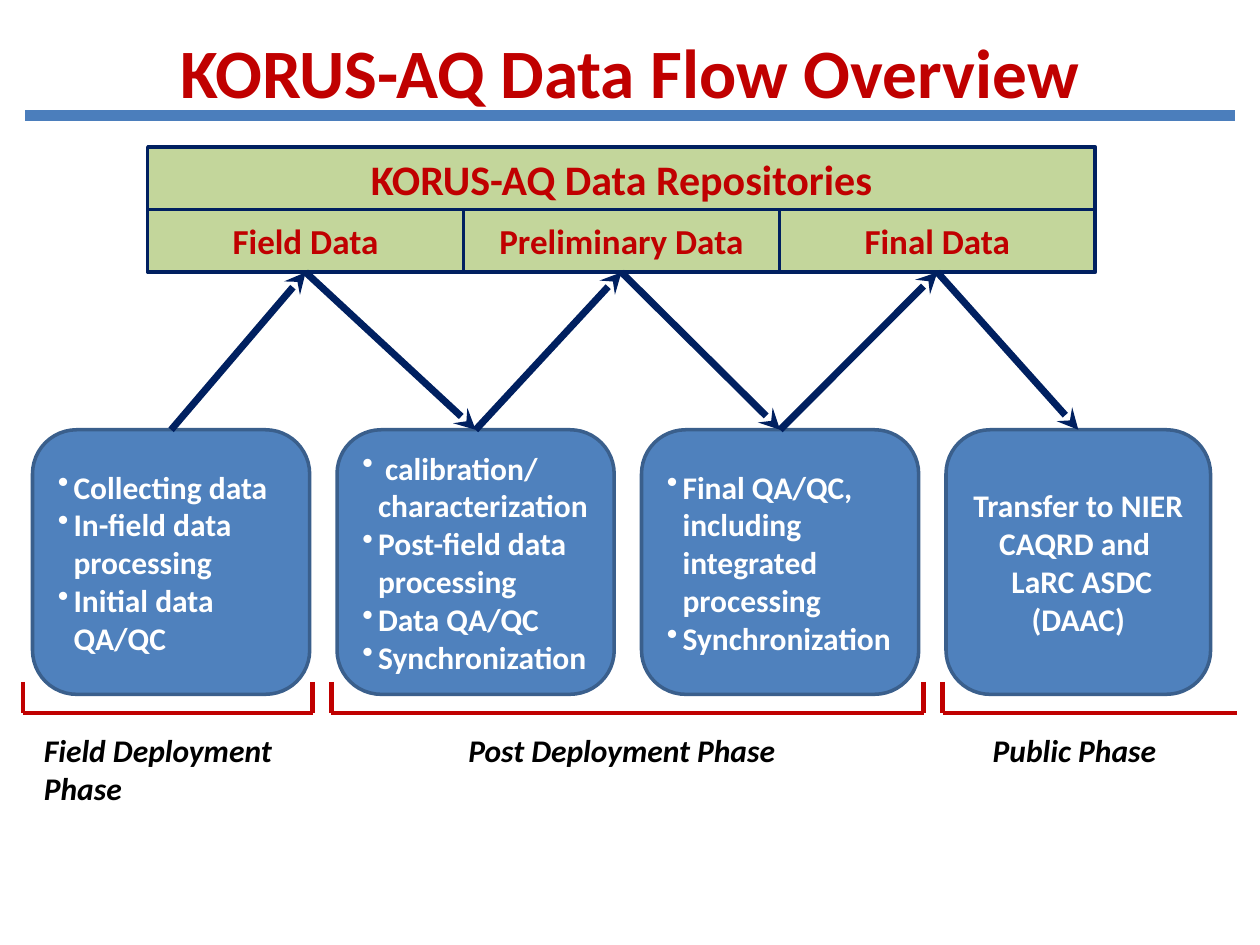
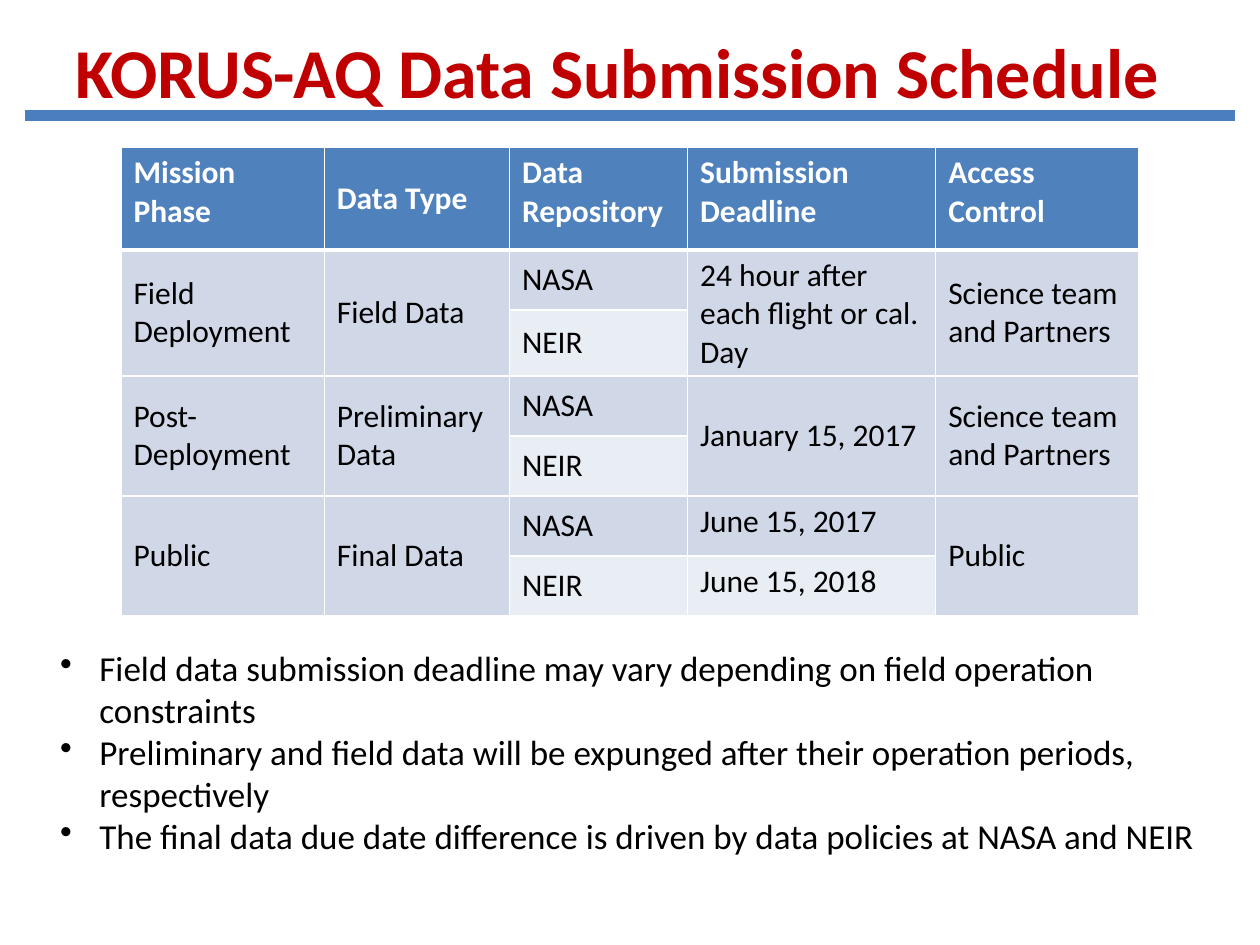
from dataclasses import dataclass
from itertools import pairwise

from pptx import Presentation
from pptx.dml.color import RGBColor
from pptx.enum import shapes, text
from pptx.oxml.ns import qn
from pptx.util import Pt
from lxml import etree

LEFT, CENTER = text.PP_ALIGN.LEFT, text.PP_ALIGN.CENTER
TOP, MIDDLE = text.MSO_ANCHOR.TOP, text.MSO_ANCHOR.MIDDLE
BOX_TOP, BOX_BOTTOM = 0, 2


@dataclass(frozen=True)
class Theme:
    font: str = "Calibri"
    red: str = "C00000"
    navy: str = "002060"
    blue: str = "4F81BD"
    blue_edge: str = "3A5F8C"
    rule: str = "4B7EBC"
    green: str = "C3D69B"
    band_dark: str = "D0D8E8"
    band_light: str = "E9EDF4"
    white: str = "FFFFFF"
    black: str = "000000"
    overview_title_size: float = 39.6
    schedule_title_size: float = 40
    heading_size: float = 24
    large_size: float = 20
    body_size: float = 18


THEME = Theme()

STEPS = [
    ["Collecting data", "In-field data processing", "Initial data QA/QC"],
    [" calibration/ characterization", "Post-field data processing",
     "Data QA/QC", "Synchronization"],
    ["Final QA/QC, including integrated processing", "Synchronization"],
]
TRANSFER = ["Transfer to NIER CAQRD and ", " LaRC ASDC", "(DAAC)"]

# label, label left, label width, bracket left, bracket right, closed on the right
PHASES = [
    ("Field Deployment Phase", 18, 156, 13, 178.6, True),
    ("Post Deployment Phase", 260.6, 197, 189.4, 527.8, True),
    ("Public Phase", 560.2, 113, 538.6, 707, False),
]

# None continues the cell above
SCHEDULE = [
    ["Mission Phase", "Data Type", "Data Repository", "Submission Deadline",
     "Access Control"],
    ["Field Deployment", "Field Data", "NASA",
     "24 hour after each flight or cal. Day", "Science team and Partners"],
    [None, None, "NEIR", None, None],
    ["Post-Deployment", "Preliminary Data", "NASA", "January 15, 2017",
     "Science team and Partners"],
    [None, None, "NEIR", None, None],
    ["Public", "Final Data", "NASA", "June 15, 2017", "Public"],
    [None, None, "NEIR", "June 15, 2018", None],
]
SCHEDULE_NOTES = [
    "Field data submission deadline may vary depending on field operation constraints",
    "Preliminary and field data will be expunged after their operation periods, "
    "respectively",
    "The final data due date difference is driven by data policies at NASA and NEIR",
]


def rgb(color):
    return RGBColor.from_string(color)


def write(frame, lines, color, size, align=LEFT, bullet_indent=0, **formats):
    frame.word_wrap = True
    for number, line in enumerate(lines):
        paragraph = frame.add_paragraph() if number else frame.paragraphs[0]
        paragraph.alignment = align
        if bullet_indent:
            properties = paragraph._p.get_or_add_pPr()
            properties.set("marL", str(Pt(bullet_indent)))
            properties.set("indent", str(-Pt(bullet_indent)))
            etree.SubElement(properties, qn("a:buChar"), char="•")
        run = paragraph.add_run()
        run.text = line
        run.font.color.rgb = rgb(color)
        for name, value in {"name": THEME.font, "size": Pt(size), **formats}.items():
            setattr(run.font, name, value)


def add_text(slide, bounds, lines, color, size, anchor=TOP, **formats):
    frame = slide.shapes.add_textbox(*map(Pt, bounds)).text_frame
    frame.vertical_anchor = anchor
    write(frame, lines, color, size, **formats)


def add_box(slide, preset, bounds, fill, edge, lines, color, size, **formats):
    box = slide.shapes.add_shape(preset, *map(Pt, bounds))
    box.shadow.inherit = False
    box.fill.solid()
    box.fill.fore_color.rgb = rgb(fill)
    box.line.color.rgb = rgb(edge)
    box.line.width = Pt(2)
    box.text_frame.vertical_anchor = MIDDLE
    write(box.text_frame, lines, color, size, bold=True, **formats)
    return box


def add_line(slide, start, end, color, width):
    line = slide.shapes.add_connector(
        shapes.MSO_CONNECTOR.STRAIGHT, *map(Pt, (*start, *end)))
    line.line.color.rgb = rgb(color)
    line.line.width = Pt(width)
    etree.SubElement(line._element.spPr, qn("a:effectLst"))
    return line


def add_flow_arrow(slide, source, target):
    """Join (box, side) to (box, side) with an arrow."""
    arrow = add_line(slide, (0, 0), (0, 0), THEME.navy, 4)
    arrow.begin_connect(*source)
    arrow.end_connect(*target)
    etree.SubElement(arrow.line._get_or_add_ln(), qn("a:tailEnd"), type="stealth")


def add_title(slide, title, top, height, size, align):
    add_text(slide, (36, top, 648, height), [title], THEME.red, size,
             anchor=MIDDLE, align=align, bold=True)
    add_line(slide, (14.4, 66), (705.6, 66), THEME.rule, 6)


def add_repositories(slide):
    left, top, width, height = 84.4, 84, 180.5, 35.8

    def repository(column, row, columns, label, size):
        bounds = left + column * width, top + row * height, columns * width, height
        return add_box(slide, shapes.MSO_SHAPE.RECTANGLE, bounds, THEME.green,
                       THEME.navy, [label], THEME.red, size, align=CENTER)

    labels = "Field Data", "Preliminary Data", "Final Data"
    parts = [repository(column, 1, 1, label, THEME.large_size)
             for column, label in enumerate(labels)]
    repository(0, 0, 3, "KORUS-AQ Data Repositories", THEME.heading_size)
    return parts


def add_steps(slide):
    def step(column, width, lines, **formats):
        bounds = 18.6 + 174 * column, 245.6, width, 151.2
        return add_box(slide, shapes.MSO_SHAPE.ROUNDED_RECTANGLE, bounds, THEME.blue,
                       THEME.blue_edge, lines, THEME.white, THEME.body_size, **formats)

    steps = [step(column, 158.4, lines, bullet_indent=9)
             for column, lines in enumerate(STEPS)]
    return steps + [step(len(STEPS), 151.2, TRANSFER, align=CENTER)]


def add_phase(slide, label, label_left, label_width, left, right, closed):
    bottom, tip = 407.5, 389.7
    add_line(slide, (left, bottom), (right, bottom), THEME.red, 2.5)
    for side in (left, right) if closed else (left,):
        add_line(slide, (side, tip), (side, bottom), THEME.red, 2.5)
    add_text(slide, (label_left, 414, label_width, 29), [label], THEME.black,
             THEME.body_size, bold=True, italic=True)


def add_borders(cell, bottom_width):
    properties = cell._tc.get_or_add_tcPr()
    widths = {"lnL": 1, "lnR": 1, "lnT": 1, "lnB": bottom_width}
    for place, (tag, width) in enumerate(widths.items()):
        border = etree.Element(qn(f"a:{tag}"), w=str(Pt(width)))
        fill = etree.SubElement(border, qn("a:solidFill"))
        etree.SubElement(fill, qn("a:srgbClr"), val=THEME.white)
        properties.insert(place, border)


def add_schedule(slide):
    widths = 116.2, 105.8, 101.8, 141.8, 116.2
    heights = [58.4] + [34.3] * (len(SCHEDULE) - 1)
    bounds = 69.1, 84.4, sum(widths), sum(heights)
    table = slide.shapes.add_table(
        len(heights), len(widths), *map(Pt, bounds)).table
    for column, width in zip(table.columns, widths):
        column.width = Pt(width)
    for row, height in zip(table.rows, heights):
        row.height = Pt(height)

    for r, entries in enumerate(SCHEDULE):
        header = r == 0
        fill = THEME.blue if header else THEME.band_dark if r % 2 else THEME.band_light
        for c, entry in enumerate(entries):
            cell = table.cell(r, c)
            cell.fill.solid()
            cell.fill.fore_color.rgb = rgb(fill)
            add_borders(cell, 3 if header else 1)
            if entry is None:
                table.cell(r - 1, c).merge(cell)
                continue
            at_top = c != 1 if header else c == 3 and r != 3
            cell.vertical_anchor = TOP if at_top else MIDDLE
            write(cell.text_frame, [entry], THEME.white if header else THEME.black,
                  THEME.body_size, bold=header)


def build_overview(slide):
    add_title(slide, "KORUS-AQ Data Flow Overview", 12.2, 56.2,
              THEME.overview_title_size, CENTER)
    repositories = add_repositories(slide)
    first, *later = add_steps(slide)
    stops = [(first, BOX_TOP)]
    for repository, step in zip(repositories, later):
        stops += [(repository, BOX_BOTTOM), (step, BOX_TOP)]
    for source, target in pairwise(stops):
        add_flow_arrow(slide, source, target)
    for phase in PHASES:
        add_phase(slide, *phase)


def build_schedule(slide):
    add_title(slide, "KORUS-AQ Data Submission Schedule", 5.8, 68.4,
              THEME.schedule_title_size, LEFT)
    add_schedule(slide)
    add_text(slide, (27.2, 366, 666, 128), SCHEDULE_NOTES, THEME.black,
             THEME.large_size, bullet_indent=22.5)


def main():
    deck = Presentation()
    deck.slide_width, deck.slide_height = Pt(720), Pt(540)
    blank = deck.slide_layouts[6]
    for build in (build_overview, build_schedule):
        build(deck.slides.add_slide(blank))
    deck.save("out.pptx")


if __name__ == "__main__":
    main()
